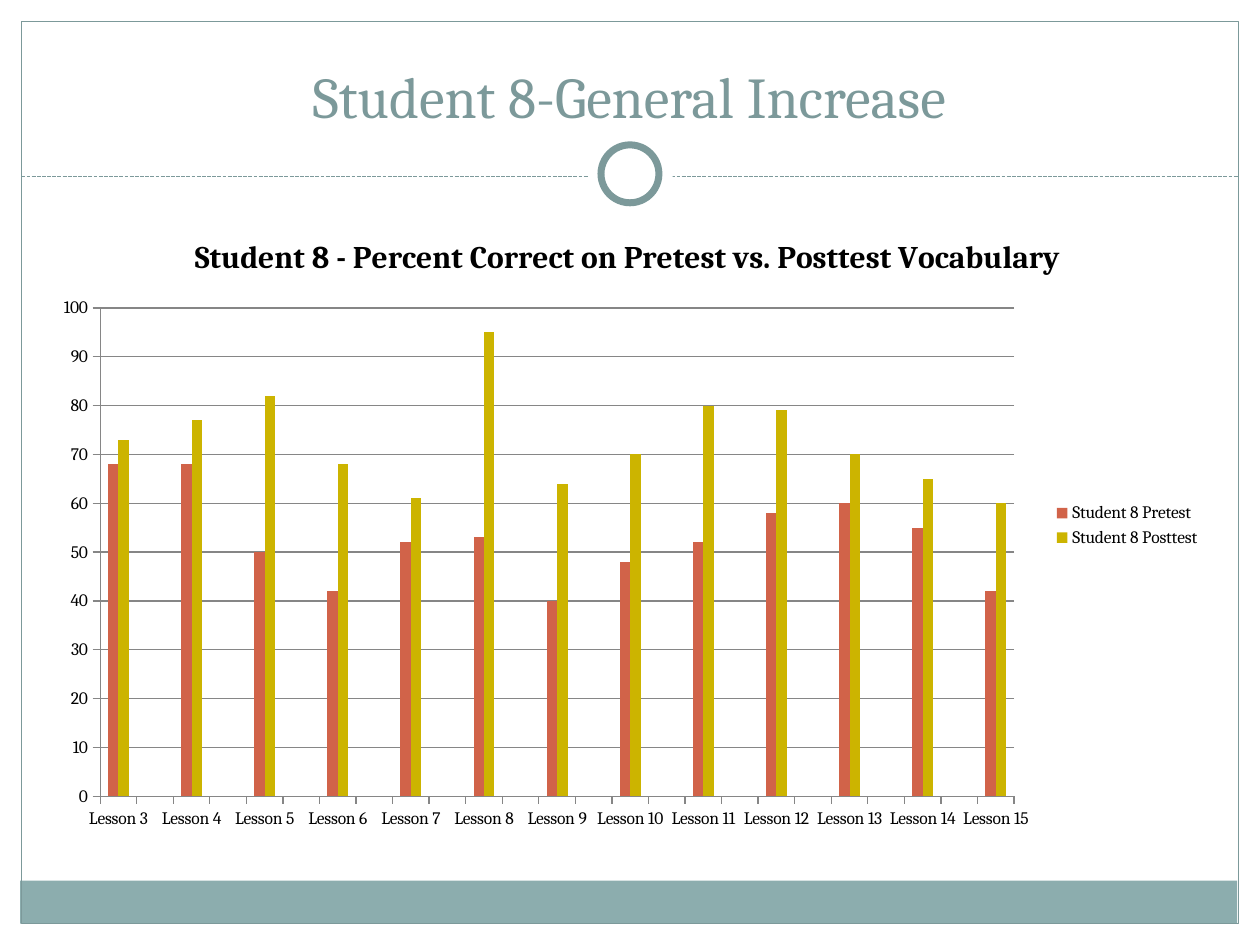
import pptx
import pptx.chart.data
import pptx.dml.color
import pptx.enum.chart
import pptx.enum.dml
import pptx.enum.shapes
import pptx.enum.text
import pptx.util
from lxml import etree

Inches, Pt = pptx.util.Inches, pptx.util.Pt
RGB = pptx.dml.color.RGBColor
SHAPE = pptx.enum.shapes.MSO_SHAPE
WHITE, BLACK = RGB(0xFF, 0xFF, 0xFF), RGB(0, 0, 0)
TEAL, BAND = RGB(0x7C, 0x99, 0x9A), RGB(0x8C, 0xAD, 0xAE)
RED, GOLD = RGB(0xD1, 0x63, 0x49), RGB(0xCC, 0xB4, 0x00)
GRAY = RGB(0x86, 0x86, 0x86)
FONT = "Cambria"
PRE = [68, 68, 50, 42, 52, 53, 40, 48, 52, 58, 60, 55, 42]
POST = [73, 77, 82, 68, 61, 95, 64, 70, 80, 79, 70, 65, 60]


def box(slide, kind, left, top, width, height, fill=None, line=None, weight=0.75):
    shape = slide.shapes.add_shape(
        kind, Inches(left), Inches(top), Inches(width), Inches(height))
    shape.shadow.inherit = False
    if fill is None:
        shape.fill.background()
    else:
        shape.fill.solid()
        shape.fill.fore_color.rgb = fill
    if line is None:
        shape.line.fill.background()
    else:
        shape.line.color.rgb = line
        shape.line.width = Pt(weight)


def rule(slide, left, right, y):
    """Draw a dashed line across the slide."""
    line = slide.shapes.add_connector(
        pptx.enum.shapes.MSO_CONNECTOR.STRAIGHT,
        Inches(left), Inches(y), Inches(right), Inches(y))
    line.line.color.rgb = TEAL
    line.line.width = Pt(0.75)
    line.line.dash_style = pptx.enum.dml.MSO_LINE.SQUARE_DOT
    props = line._element.spPr
    etree.SubElement(props, pptx.oxml.ns.qn("a:effectLst"))


def style(font, size, color, bold=False):
    font.name, font.size, font.bold = FONT, Pt(size), bold
    font.color.rgb = color


def title(slide, text):
    area = slide.shapes.add_textbox(
        Inches(0.33), Inches(0.25), Inches(9.33), Inches(0.83))
    frame = area.text_frame
    frame.word_wrap = True
    frame.vertical_anchor = pptx.enum.text.MSO_ANCHOR.BOTTOM
    para = frame.paragraphs[0]
    para.alignment = pptx.enum.text.PP_ALIGN.CENTER
    run = para.add_run()
    run.text = text
    style(run.font, 33, TEAL)


def spread(items, gap):
    """Put a gap between each pair of items."""
    return [part for item in items for part in (item, gap)][:-1]


def place(chart, left, top, width, height):
    """Fix the inner plot area, in fractions of the chart."""
    area = chart._chartSpace.chart.plotArea
    old = area.find(pptx.oxml.ns.qn("c:layout"))
    if old is not None:
        area.remove(old)
    layout = etree.Element(pptx.oxml.ns.qn("c:layout"))
    manual = etree.SubElement(layout, pptx.oxml.ns.qn("c:manualLayout"))
    pairs = [("layoutTarget", "inner"), ("xMode", "edge"), ("yMode", "edge"),
             ("x", left), ("y", top), ("w", width), ("h", height)]
    for tag, value in pairs:
        etree.SubElement(manual, pptx.oxml.ns.qn("c:" + tag)).set("val", str(value))
    area.insert(0, layout)


def graph(slide):
    data = pptx.chart.data.CategoryChartData()
    data.categories = spread([f"Lesson {n}" for n in range(3, 16)], "")
    data.add_series("Student 8 Pretest", spread(PRE, None))
    data.add_series("Student 8 Posttest", spread(POST, None))
    chart = slide.shapes.add_chart(
        pptx.enum.chart.XL_CHART_TYPE.COLUMN_CLUSTERED,
        Inches(0.33), Inches(1.67), Inches(9.3), Inches(5), data).chart
    style(chart.font, 10, BLACK)

    chart.has_title = True
    run = chart.chart_title.text_frame.paragraphs[0].add_run()
    run.text = "Student 8 - Percent Correct on Pretest vs. Posttest Vocabulary"
    style(run.font, 18, BLACK, True)

    chart.has_legend = True
    chart.legend.position = pptx.enum.chart.XL_LEGEND_POSITION.RIGHT
    chart.legend.include_in_layout = False

    plot = chart.plots[0]
    plot.vary_by_categories = False
    plot.gap_width, plot.overlap = 150, 0
    for series, color in zip(plot.series, (RED, GOLD)):
        series.format.fill.solid()
        series.format.fill.fore_color.rgb = color

    scale = chart.value_axis
    scale.minimum_scale, scale.maximum_scale, scale.major_unit = 0, 100, 10
    scale.has_major_gridlines = True
    for axis in (chart.category_axis, scale):
        axis.major_tick_mark = pptx.enum.chart.XL_TICK_MARK.OUTSIDE
        axis.format.line.color.rgb = GRAY
    scale.major_gridlines.format.line.color.rgb = GRAY
    place(chart, 0.05, 0.155, 0.78, 0.775)


def main():
    deck = pptx.Presentation()
    deck.slide_width, deck.slide_height = Inches(10), Inches(7.5)
    slide = deck.slides.add_slide(deck.slide_layouts[6])
    rect, oval = SHAPE.RECTANGLE, SHAPE.OVAL
    box(slide, rect, 0, 0, 10, 1.52, WHITE)
    for left in (0, 9.83):
        box(slide, rect, left, 0, 0.17, 7.5, WHITE)
    box(slide, rect, 0.16, 6.99, 9.66, 0.34, BAND)
    box(slide, rect, 0.17, 0.17, 9.66, 7.16, line=TEAL)
    rule(slide, 0.17, 9.83, 1.4)
    box(slide, oval, 4.67, 1.05, 0.67, 0.67, WHITE)
    box(slide, oval, 4.77, 1.15, 0.46, 0.46, WHITE, TEAL, 4)
    title(slide, "Student 8-General Increase")
    graph(slide)
    deck.save("out.pptx")


if __name__ == "__main__":
    main()
